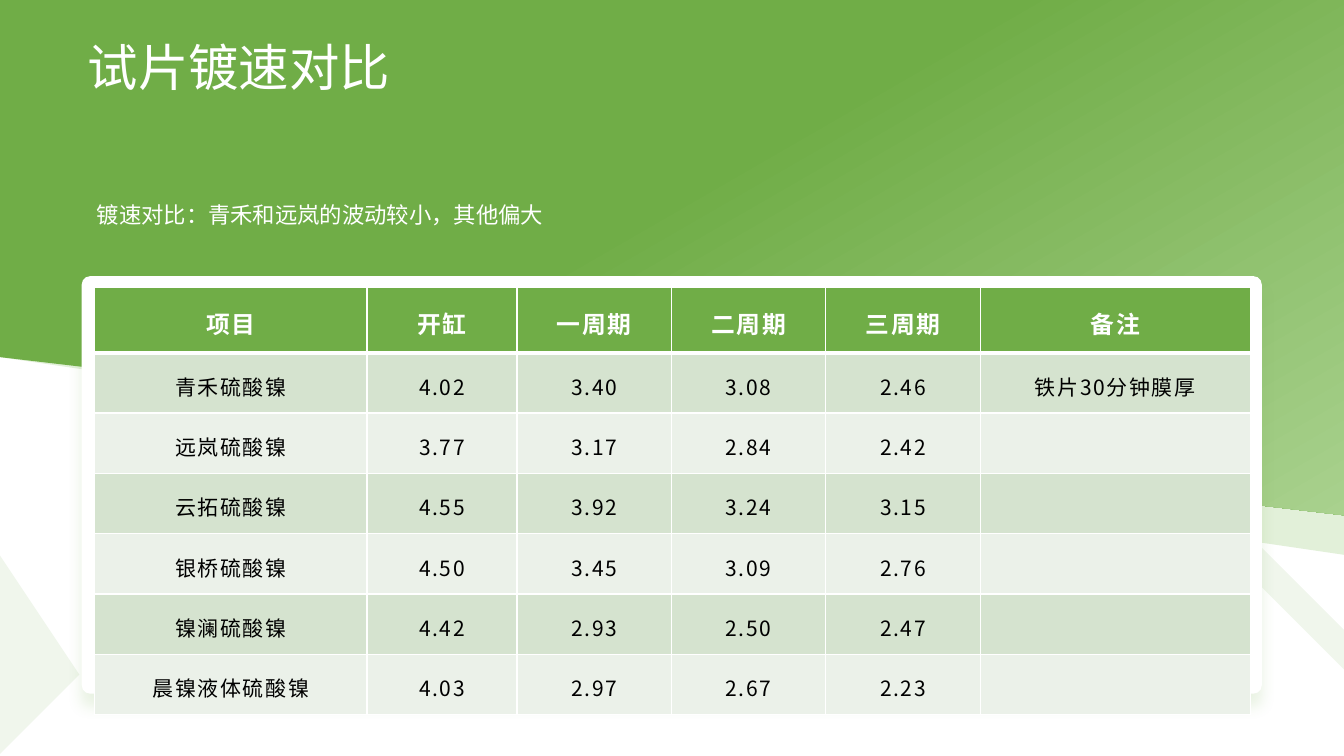
from lxml import etree
from pptx import Presentation
from pptx import util as u
from pptx.dml import color
from pptx.enum import shapes, text
from pptx.oxml import ns, parse_xml

FONT = "Noto Sans CJK SC"
GREEN, PALE_GREEN, LIGHT_GREEN = "70AD47", "E2F0D9", "A9D18E"
BAND_DARK, BAND_LIGHT = "D5E3CF", "EBF1E9"
WHITE, BLACK = "FFFFFF", "000000"

COLUMN_WIDTHS = [6.86, 3.78, 3.89, 3.89, 3.89, 6.81]
PLATING_SPEEDS = [
    ["项目", "开缸", "一周期", "二周期", "三周期", "备注"],
    ["青禾硫酸镍", "4.02", "3.40", "3.08", "2.46", "铁片30分钟膜厚"],
    ["远岚硫酸镍", "3.77", "3.17", "2.84", "2.42", ""],
    ["云拓硫酸镍", "4.55", "3.92", "3.24", "3.15", ""],
    ["银桥硫酸镍", "4.50", "3.45", "3.09", "2.76", ""],
    ["镍澜硫酸镍", "4.42", "2.93", "2.50", "2.47", ""],
    ["晨镍液体硫酸镍", "4.03", "2.97", "2.67", "2.23", ""],
]
FAINT_RIBBONS = [
    [(33.83, 1.19), (33.81, 2.62), (26.85, 9.04), (33.83, 15.95), (33.86, 17.4), (25.55, 9.04)],
    [(33.86, 5.44), (33.86, 12.7), (30.33, 9.07)],
    [(0, 14.05), (0, 19.05), (2.18, 16.54)],
]
PALE_BAND = [(0, 0.71), (33.86, 0.71), (33.86, 14.22), (0, 8.99)]
GREEN_BAND = [(0, 0), (33.86, 0), (33.88, 13.18), (0, 8.74)]


def rgb(value):
    return color.RGBColor.from_string(value)


def paint(fill, value, alpha=None):
    fill.solid()
    fill.fore_color.rgb = rgb(value)
    if alpha is not None:
        srgb = fill._xPr.find(".//" + ns.qn("a:srgbClr"))
        etree.SubElement(srgb, ns.qn("a:alpha"), val=str(alpha * 1000))


def add_outline(slide, points, value, alpha=None):
    builder = slide.shapes.build_freeform(*points[0], scale=u.Cm(1))
    builder.add_line_segments(points[1:], close=True)
    outline = builder.convert_to_shape()
    outline.shadow.inherit = False
    outline.line.fill.background()
    paint(outline.fill, value, alpha)
    return outline


def add_green_band(slide):
    band = add_outline(slide, GREEN_BAND, GREEN)
    band.fill.gradient()
    band.fill.gradient_angle = 300
    for stop, position, value in zip(band.fill.gradient_stops, (0.45, 1), (GREEN, LIGHT_GREEN)):
        stop.position = position
        stop.color.rgb = rgb(value)


def add_panel(slide):
    panel = slide.shapes.add_shape(
        shapes.MSO_SHAPE.ROUNDED_RECTANGLE, u.Cm(2.06), u.Cm(6.96), u.Cm(29.74), u.Cm(10.52))
    panel.adjustments[0] = 0.02
    panel.line.fill.background()
    paint(panel.fill, WHITE)
    panel.shadow.inherit = False
    panel._element.spPr.find(ns.qn("a:effectLst")).append(parse_xml(
        f'<a:outerShdw {ns.nsdecls("a")} blurRad="{u.Pt(10)}" dist="{u.Pt(10)}" dir="5400000" '
        f'algn="t" rotWithShape="0"><a:srgbClr val="{GREEN}"><a:alpha val="15000"/>'
        '</a:srgbClr></a:outerShdw>'))


def add_run(paragraph, words, size, value, bold=False, tracking=None):
    run = paragraph.add_run()
    run.text = words
    run.font.size = u.Pt(size)
    run.font.bold = bold
    run.font.name = FONT
    run.font.color.rgb = rgb(value)
    properties = run.font._element
    etree.SubElement(properties, ns.qn("a:ea"), typeface=FONT)
    if tracking:
        properties.set("spc", str(tracking))


def fill_text(box, words, size, spacing, anchor):
    frame = box.text_frame
    frame.word_wrap = True
    frame.auto_size = text.MSO_AUTO_SIZE.NONE
    frame.vertical_anchor = anchor
    frame.margin_left = frame.margin_right = frame.margin_top = frame.margin_bottom = 0
    paragraph = frame.paragraphs[0]
    paragraph.alignment = text.PP_ALIGN.LEFT
    paragraph.line_spacing = spacing
    paragraph.space_before = u.Pt(0)
    add_run(paragraph, words, size, WHITE)


def place_title(slide, words):
    title = slide.shapes.title
    title.left, title.top, title.width, title.height = map(u.Cm, (2.21, 0.74, 30.48, 2.03))
    slide.shapes._spTree.append(title._element)
    fill_text(title, words, 36, 1.11, text.MSO_ANCHOR.TOP)


def add_summary(slide, words):
    summary = slide.shapes.add_textbox(u.Cm(2.44), u.Cm(3.99), u.Cm(29.49), u.Cm(2.51))
    fill_text(summary, words, 16, 1.5, text.MSO_ANCHOR.MIDDLE)


def add_borders(cell, top, bottom):
    properties = cell._tc.get_or_add_tcPr()
    sides = (("L", 1), ("R", 1), ("T", top), ("B", bottom))
    for position, (side, points) in enumerate(sides):
        properties.insert(position, parse_xml(
            f'<a:ln{side} {ns.nsdecls("a")} w="{u.Pt(points)}"><a:solidFill>'
            f'<a:srgbClr val="{WHITE}"/></a:solidFill></a:ln{side}>'))


def fill_cell(cell, words, row):
    is_header = row == 0
    paint(cell.fill, GREEN if is_header else BAND_DARK if row % 2 else BAND_LIGHT)
    add_borders(cell, top=3 if row == 1 else 1, bottom=3 if is_header else 1)
    cell.vertical_anchor = text.MSO_ANCHOR.MIDDLE
    cell.margin_left = cell.margin_right = u.Cm(0.48)
    cell.margin_top = cell.margin_bottom = u.Cm(0.3)
    if not words:
        return
    paragraph = cell.text_frame.paragraphs[0]
    paragraph.alignment = text.PP_ALIGN.CENTER
    paragraph.line_spacing = 1.2
    if is_header:
        add_run(paragraph, words, 17, WHITE, bold=True, tracking=130)
    else:
        add_run(paragraph, words, 15, BLACK, tracking=120)


def add_speed_table(slide):
    row_heights = [1.5] + [1.4] * (len(PLATING_SPEEDS) - 1)
    table = slide.shapes.add_table(
        len(PLATING_SPEEDS), len(COLUMN_WIDTHS), u.Cm(2.39), u.Cm(7.24),
        u.Cm(sum(COLUMN_WIDTHS)), u.Cm(sum(row_heights))).table
    for column, width in zip(table.columns, COLUMN_WIDTHS):
        column.width = u.Cm(width)
    for row, (height, entries) in enumerate(zip(row_heights, PLATING_SPEEDS)):
        table.rows[row].height = u.Cm(height)
        for column, words in enumerate(entries):
            fill_cell(table.cell(row, column), words, row)


def main():
    deck = Presentation()
    deck.slide_width, deck.slide_height = u.Cm(33.87), u.Cm(19.05)
    slide = deck.slides.add_slide(deck.slide_layouts[5])
    for ribbon in FAINT_RIBBONS:
        add_outline(slide, ribbon, GREEN, alpha=10)
    add_outline(slide, PALE_BAND, PALE_GREEN)
    add_green_band(slide)
    add_panel(slide)
    place_title(slide, "试片镀速对比")
    add_summary(slide, "镀速对比：青禾和远岚的波动较小，其他偏大")
    add_speed_table(slide)
    deck.save("out.pptx")


if __name__ == "__main__":
    main()
